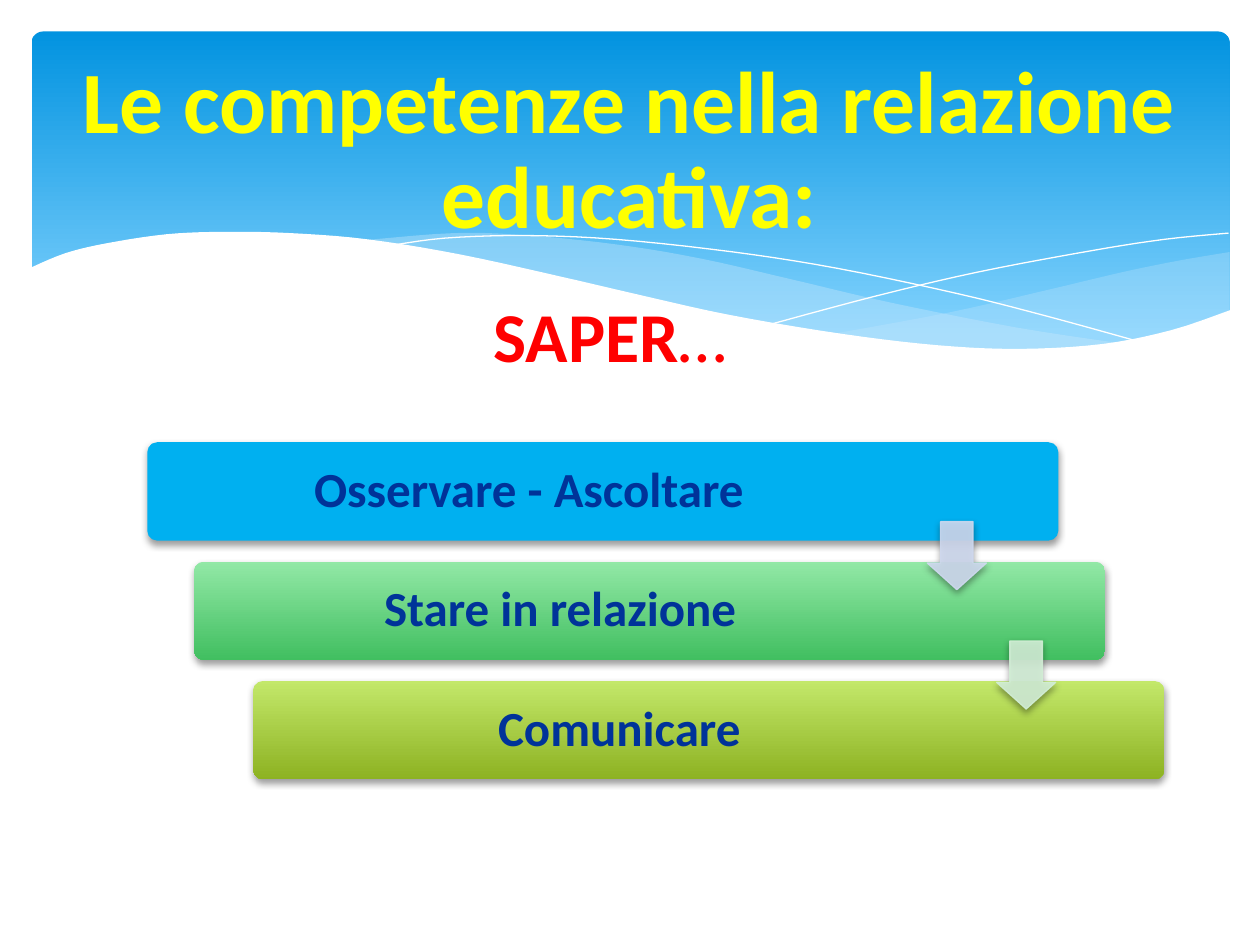
"""Build the slide on competences in the educational relationship."""
from dataclasses import dataclass
from typing import Optional

from lxml import etree
from pptx import Presentation
from pptx.dml.color import RGBColor
from pptx.enum import shapes, text
from pptx.oxml import ns
from pptx.util import Pt

WHITE = RGBColor(0xFF, 0xFF, 0xFF)
YELLOW = RGBColor(0xFF, 0xFF, 0x00)
RED = RGBColor(0xFF, 0x00, 0x00)
NAVY = RGBColor(0x00, 0x33, 0x99)
SKY_TOP = RGBColor(0x02, 0x93, 0xE0)
SKY_END = RGBColor(0x83, 0xD3, 0xFE)
MIST = RGBColor(0xC6, 0xE7, 0xFC)
BLUE = RGBColor(0x00, 0xB0, 0xF0)
GREEN_TOP = RGBColor(0x92, 0xE8, 0xA6)
GREEN_END = RGBColor(0x41, 0xBF, 0x60)
LIME_TOP = RGBColor(0xC3, 0xE8, 0x6A)
LIME_END = RGBColor(0x8D, 0xB2, 0x22)
PALE_BLUE = RGBColor(0xCF, 0xD9, 0xEF)
PALE_GREEN = RGBColor(0xD2, 0xEE, 0xD6)

FONT = "Calibri"
BAR_TOP, BAR_WIDTH, BAR_HEIGHT, PITCH = 252.7, 520.6, 56.2, 68.2
ARROW_TOP, ARROW_WIDTH, ARROW_HEIGHT = 298.1, 33.8, 38.9

Points = list[tuple[float, float]]


@dataclass
class Bar:
    label: str
    left: float
    text_width: float
    top_color: RGBColor
    end_color: Optional[RGBColor] = None


@dataclass
class Arrow:
    left: float
    color: RGBColor


@dataclass
class Wave:
    curves: list[Points]
    fill: Optional[RGBColor] = None
    alpha: int = 100


BARS = [
    Bar("Osservare - Ascoltare", 84.2, 436, BLUE),
    Bar("Stare in relazione", 110.9, 418.3, GREEN_TOP, GREEN_END),
    Bar("Comunicare", 144.7, 418.3, LIME_TOP, LIME_END),
]
ARROWS = [Arrow(529.9, PALE_BLUE), Arrow(569.5, PALE_GREEN)]

WAVES = [
    Wave([[(702.7, 144), (673.2, 149), (641.5, 155.5), (599, 165.6), (542.2, 178.6),
           (475.9, 190.8)],
          [(475.9, 190.8), (507.6, 195.1), (545, 198.7), (586.1, 200.2), (627.8, 197.3),
           (668.2, 189.4), (702.7, 177.8)]], MIST, 29),
    Wave([[(643, 196.6), (581, 187.2), (508.3, 172.8), (452.9, 159.8), (399.6, 147.6),
           (352.1, 139.7), (302.4, 134.6), (259.9, 133.2), (205.9, 137.5)],
          [(205.9, 137.5), (246.2, 143.3), (290.9, 151.9), (323.3, 159.8), (381.6, 172.8),
           (432.7, 183.6), (489.6, 193), (547.9, 199.4), (596.2, 200.2), (643, 196.6)]],
         MIST, 40),
    Wave([[(222.5, 140.4), (254.2, 136.1), (299.5, 134.6), (352.1, 136.8), (419, 144),
           (478.8, 153.4), (547.2, 167.8), (598.3, 180.7), (653, 195.8)]]),
    Wave([[(441.4, 185), (500.4, 169.2), (558.7, 155.5), (623.5, 143.3), (665.3, 136.8),
           (702, 133.2)]]),
    Wave([[(703.4, 177.1), (669.6, 188.6), (630, 196.6), (582.5, 199.4), (535.7, 197.3),
           (481, 190.8), (416.9, 180), (362.2, 167.8), (321.8, 158.4), (262.8, 145.4),
           (210.2, 136.8), (165.6, 133.2), (127.4, 132.5), (95, 133.9), (61.2, 139),
           (37.4, 144.7), (16.6, 153.4)],
          [(16.6, 236.9), (703.4, 236.9)]], WHITE),
]


def smooth(pts: Points, steps: int = 5) -> Points:
    """Return a Catmull-Rom curve through the points."""
    ends = [pts[0], *pts, pts[-1]]
    curve = [pts[0]]
    for a, b, c, d in zip(ends, ends[1:], ends[2:], ends[3:]):
        for t in (i / steps for i in range(1, steps + 1)):
            curve.append(tuple(
                (2 * q + (r - p) * t + (2 * p - 5 * q + 4 * r - z) * t**2
                 + (3 * q - p - 3 * r + z) * t**3) / 2
                for p, q, r, z in zip(a, b, c, d)))
    return curve


def paint(fill, color: RGBColor, end: Optional[RGBColor] = None, end_at: float = 1,
          alpha: int = 100) -> None:
    """Apply a solid or a top-to-bottom gradient fill."""
    if end is not None:
        fill.gradient()
        fill.gradient_angle = 270
        for stop, c, at in zip(fill.gradient_stops, (color, end), (0, end_at)):
            stop.color.rgb, stop.position = c, at
        return
    fill.solid()
    fill.fore_color.rgb = color
    if alpha < 100:
        clr = fill._xPr.find(".//" + ns.qn("a:srgbClr"))
        etree.SubElement(clr, ns.qn("a:alpha"), val=str(alpha * 1000))


def add_shadow(sp) -> None:
    """Give a shape a soft shadow below."""
    sp.shadow.inherit = False
    effects = sp._element.spPr.find(ns.qn("a:effectLst"))
    outer = etree.SubElement(effects, ns.qn("a:outerShdw"), blurRad=str(Pt(4)),
                             dist=str(Pt(2)), dir="5400000", rotWithShape="0")
    clr = etree.SubElement(outer, ns.qn("a:srgbClr"), val="000000")
    etree.SubElement(clr, ns.qn("a:alpha"), val="38000")


def add_preset(s, kind, left: float, top: float, width: float, height: float, *adj: float):
    """Add a preset shape without line or shadow."""
    sp = s.shapes.add_shape(kind, Pt(left), Pt(top), Pt(width), Pt(height))
    for i, value in enumerate(adj):
        sp.adjustments[i] = value
    sp.shadow.inherit = False
    sp.line.fill.background()
    return sp


def add_wave(s, wave: Wave) -> None:
    """Draw a filled wave, or a thin white curve when it has no fill."""
    pts = [pt for curve in wave.curves for pt in smooth(curve)]
    fb = s.shapes.build_freeform(Pt(pts[0][0]), Pt(pts[0][1]))
    fb.add_line_segments([(Pt(x), Pt(y)) for x, y in pts[1:]], close=wave.fill is not None)
    sp = fb.convert_to_shape()
    sp.shadow.inherit = False
    if wave.fill is None:
        sp.fill.background()
        sp.line.color.rgb = WHITE
        sp.line.width = Pt(0)
    else:
        paint(sp.fill, wave.fill, alpha=wave.alpha)
        sp.line.fill.background()


def write(tf, content: str, *, size: float, color: RGBColor, bold: bool = True,
          align=text.PP_ALIGN.CENTER, spacing: float = 0.9, wrap: bool = True,
          anchor=text.MSO_ANCHOR.MIDDLE) -> None:
    """Append a formatted run to the first paragraph of a frame."""
    tf.word_wrap, tf.vertical_anchor = wrap, anchor
    p = tf.paragraphs[0]
    p.alignment, p.line_spacing = align, spacing
    r = p.add_run()
    r.text = content
    r.font.name, r.font.size, r.font.bold = FONT, Pt(size), bold
    r.font.color.rgb = color


def add_box(s, left: float, top: float, width: float, height: float):
    """Add a text box and return its frame."""
    return s.shapes.add_textbox(Pt(left), Pt(top), Pt(width), Pt(height)).text_frame


def add_bar(s, bar: Bar, top: float) -> None:
    """Draw a step bar with its label."""
    sp = add_preset(s, shapes.MSO_SHAPE.ROUNDED_RECTANGLE, bar.left, top,
                    BAR_WIDTH, BAR_HEIGHT, 0.1)
    paint(sp.fill, bar.top_color, bar.end_color)
    add_shadow(sp)
    tf = add_box(s, bar.left, top, bar.text_width, BAR_HEIGHT)
    write(tf, bar.label, size=28, color=NAVY)


def add_arrow(s, arrow: Arrow, top: float) -> None:
    """Draw a translucent arrow leading to the next bar."""
    sp = add_preset(s, shapes.MSO_SHAPE.DOWN_ARROW, arrow.left, top,
                    ARROW_WIDTH, ARROW_HEIGHT, 0.45, 0.55)
    sp.adjustments[0], sp.adjustments[1] = 0.55, 0.45
    paint(sp.fill, arrow.color, alpha=90)
    paint(sp.line.fill, arrow.color, alpha=90)
    sp.line.width = Pt(0.75)
    add_shadow(sp)


def main() -> None:
    """Assemble and save the slide."""
    prs = Presentation()
    prs.slide_width, prs.slide_height = Pt(720), Pt(540)
    s = prs.slides.add_slide(prs.slide_layouts[5])

    sky = add_preset(s, shapes.MSO_SHAPE.ROUNDED_RECTANGLE, 18, 18, 684.7, 194.4, 0.034)
    paint(sky.fill, SKY_TOP, SKY_END, 0.9)
    for wave in WAVES:
        add_wave(s, wave)

    title = s.shapes.title
    title.left, title.top, title.width, title.height = Pt(19.4), Pt(40.3), Pt(680.4), Pt(93.6)
    title.text_frame.auto_size = text.MSO_AUTO_SIZE.NONE
    write(title.text_frame, "Le competenze nella relazione educativa:", size=50, color=YELLOW)
    s.shapes._spTree.append(title._element)

    tf = add_box(s, 275, 163.4, 169.2, 55.4)
    for content, bold in (("SAPER", True), ("…", False)):
        write(tf, content, size=40, color=RED, bold=bold, align=text.PP_ALIGN.LEFT,
              spacing=1.0, wrap=False, anchor=text.MSO_ANCHOR.TOP)

    for i, bar in enumerate(BARS):
        add_bar(s, bar, BAR_TOP + i * PITCH)
    for i, arrow in enumerate(ARROWS):
        add_arrow(s, arrow, ARROW_TOP + i * PITCH)
    prs.save("out.pptx")


if __name__ == "__main__":
    main()
